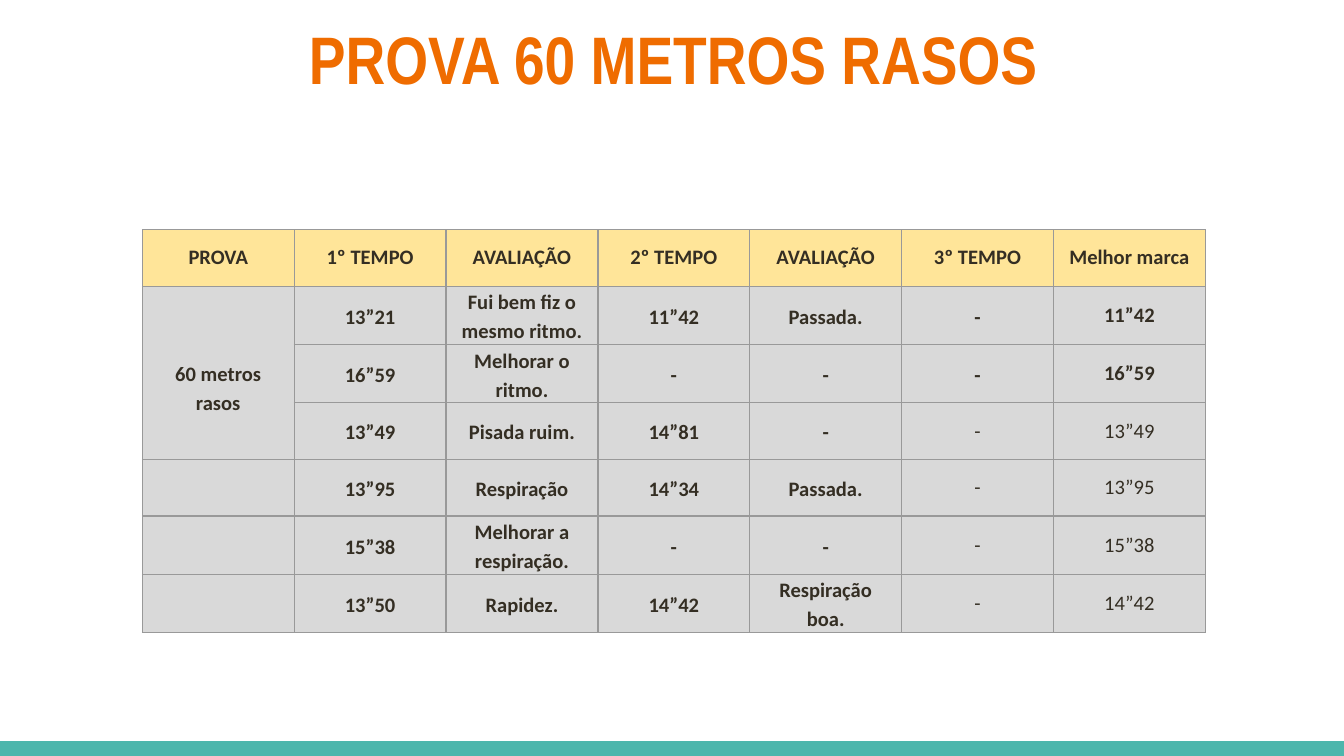
from dataclasses import dataclass

from lxml.etree import SubElement
from pptx import Presentation
from pptx.dml.color import RGBColor
from pptx.enum.shapes import MSO_SHAPE as Shape
from pptx.enum.text import MSO_ANCHOR as Anchor, PP_ALIGN as Align
from pptx.oxml.ns import qn
from pptx.util import Cm, Pt


@dataclass(frozen=True)
class Theme:
    title: str = "EF6C00"
    ink: str = "342E23"
    header: str = "FFE599"
    body: str = "D9D9D9"
    border: str = "999999"
    footer: str = "4DB6AC"
    title_font: str = "Arial Narrow"
    table_font: str = "Calibri"
    title_size: float = 36
    table_size: float = 11
    border_width: float = 0.75


@dataclass(frozen=True)
class CellStyle:
    fill: str
    bold: bool = True
    spacing: float = 1.0
    top: float = 0


@dataclass(frozen=True)
class Attempt:
    event: str
    first_time: str
    first_review: str
    second_time: str
    second_review: str
    third_time: str
    best: str

    def values(self) -> list[str]:
        return [self.event, self.first_time, self.first_review, self.second_time,
                self.second_review, self.third_time, self.best]


THEME = Theme()
HEADER = Attempt("PROVA", "1º TEMPO", "AVALIAÇÃO", "2º TEMPO", "AVALIAÇÃO",
                 "3º TEMPO", "Melhor marca")
ATTEMPTS = [
    Attempt("60 metros rasos", "13”21", "Fui bem fiz o mesmo ritmo.", "11”42", "Passada.", "-", "11”42"),
    Attempt("", "16”59", "Melhorar o ritmo.", "-", "-", "-", "16”59"),
    Attempt("", "13”49", "Pisada ruim.", "14”81", "-", "-", "13”49"),
    Attempt("", "13”95", "Respiração", "14”34", "Passada.", "-", "13”95"),
    Attempt("", "15”38", "Melhorar a respiração.", "-", "-", "-", "15”38"),
    Attempt("", "13”50", "Rapidez.", "14”42", "Respiração boa.", "-", "14”42"),
]
THIRD_TIME, BEST = 5, 6
BOLD_ROWS = 2  # attempts that stay bold up to the last column
EVENT_ROWS = 3  # attempts covered by the event name


def apply(target, formats: dict) -> None:
    for attribute, value in formats.items():
        setattr(target, attribute, value)


def write(paragraph, text: str, font: str, size: float, color: str, bold: bool) -> None:
    paragraph.alignment = Align.CENTER
    run_font = paragraph.font
    if text:
        run = paragraph.add_run()
        run.text = text
        run_font = run.font
    apply(run_font, {"name": font, "size": Pt(size), "bold": bold})
    run_font.color.rgb = RGBColor.from_string(color)


def add_borders(cell) -> None:
    properties = cell._tc.get_or_add_tcPr()
    for side in ("a:lnL", "a:lnR", "a:lnT", "a:lnB"):
        line = SubElement(properties, qn(side), w=str(Pt(THEME.border_width)))
        solid = SubElement(line, qn("a:solidFill"))
        SubElement(solid, qn("a:srgbClr"), val=THEME.border)


def style_for(row: int, column: int) -> CellStyle:
    if row == 0:
        return CellStyle(THEME.header)
    bold = row <= BOLD_ROWS or column < THIRD_TIME
    single = column == BEST or not bold
    # The event name sits half a line below the middle of its cell
    top = 0.54 if (row, column) == (1, 0) else 0
    return CellStyle(THEME.body, bold, 1.0 if single else 1.15, top)


def fill_cell(cell, text: str, style: CellStyle) -> None:
    add_borders(cell)
    cell.fill.solid()
    cell.fill.fore_color.rgb = RGBColor.from_string(style.fill)
    apply(cell, {"vertical_anchor": Anchor.MIDDLE, "margin_left": Cm(0.2),
                 "margin_right": Cm(0.2), "margin_top": Cm(style.top), "margin_bottom": 0})
    paragraph = cell.text_frame.paragraphs[0]
    paragraph.line_spacing = style.spacing
    write(paragraph, text, THEME.table_font, THEME.table_size, THEME.ink, style.bold)


def add_footer(slide) -> None:
    bar = slide.shapes.add_shape(Shape.RECTANGLE, 0, Cm(14.01), Cm(25.4), Cm(0.28))
    bar.shadow.inherit = False
    bar.fill.solid()
    bar.fill.fore_color.rgb = RGBColor.from_string(THEME.footer)
    bar.line.fill.background()


def add_results(slide) -> None:
    records = [HEADER, *ATTEMPTS]
    columns = len(HEADER.values())
    table = slide.shapes.add_table(len(records), columns, Cm(2.69), Cm(4.34),
                                   Cm(2.87) * columns, Cm(1.07) * len(records)).table
    apply(table, {"first_row": False, "horz_banding": False})
    for row, record in enumerate(records):
        for column, text in enumerate(record.values()):
            fill_cell(table.cell(row, column), text, style_for(row, column))
    table.cell(1, 0).merge(table.cell(EVENT_ROWS, 0))


def add_title(slide) -> None:
    frame = slide.shapes.add_textbox(Cm(0.89), Cm(0.08), Cm(23.67), Cm(1.6)).text_frame
    margins = {f"margin_{side}": Cm(0.25) for side in ("left", "right", "top", "bottom")}
    apply(frame, {"word_wrap": True, "vertical_anchor": Anchor.TOP, **margins})
    write(frame.paragraphs[0], "PROVA 60 METROS RASOS", THEME.title_font,
          THEME.title_size, THEME.title, True)


def main() -> None:
    presentation = Presentation()
    apply(presentation, {"slide_width": Cm(25.4), "slide_height": Cm(14.29)})
    slide = presentation.slides.add_slide(presentation.slide_layouts[6])
    add_footer(slide)
    add_results(slide)
    add_title(slide)
    presentation.save("out.pptx")


if __name__ == "__main__":
    main()
